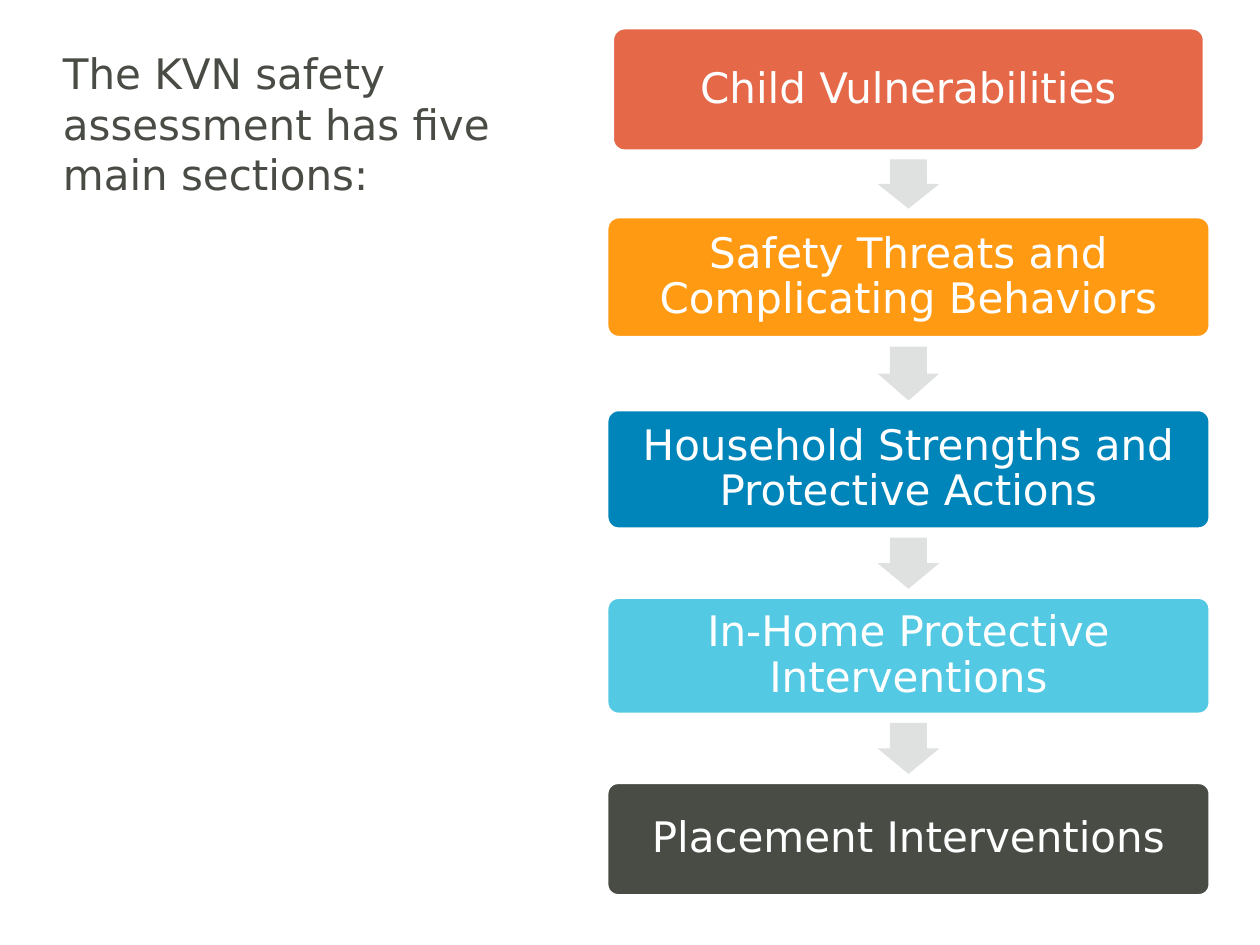
from pptx import Presentation
from pptx.dml.color import RGBColor
from pptx.enum import shapes, text
from pptx.util import Inches, Pt

FONT = "DejaVu Sans"
WHITE = RGBColor(0xFF, 0xFF, 0xFF)
CORAL = RGBColor(0xE5, 0x68, 0x49)
ORANGE = RGBColor(0xFF, 0x9A, 0x12)
BLUE = RGBColor(0x00, 0x85, 0xBA)
SKY = RGBColor(0x53, 0xC9, 0xE4)
CHARCOAL = RGBColor(0x48, 0x4C, 0x45)
GREY = RGBColor(0xDE, 0xE1, 0xDF)

CENTER = 7.21  # shared vertical axis of the flow
ARROW_WIDTH = 0.49
ARROW_SHARE = 0.75  # part of each gap that its arrow fills

# Section name, fill, top, width, height
SECTIONS = [
    ("Child Vulnerabilities", CORAL, 0.22, 4.7, 0.98),
    ("Safety Threats and Complicating Behaviors", ORANGE, 1.72, 4.79, 0.96),
    ("Household Strengths and Protective Actions", BLUE, 3.25, 4.79, 0.95),
    ("In-Home Protective Interventions", SKY, 4.74, 4.79, 0.93),
    ("Placement Interventions", CHARCOAL, 6.21, 4.79, 0.9),
]


def write_text(box, words, *, color, align, anchor, inset, spacing=1.0, size=24):
    frame = box.text_frame
    frame.word_wrap = True
    frame.vertical_anchor = anchor
    frame.margin_left = frame.margin_right = Inches(inset[0])
    frame.margin_top = frame.margin_bottom = Inches(inset[1])
    para = frame.paragraphs[0]
    para.alignment = align
    para.line_spacing = spacing
    span = para.add_run()
    span.text = words
    span.font.name = FONT
    span.font.size = Pt(size)
    span.font.color.rgb = color


def add_filled(page, kind, left, top, width, height, fill, adjustments):
    box = page.shapes.add_shape(
        kind, Inches(left), Inches(top), Inches(width), Inches(height))
    box.shadow.inherit = False
    for index, value in enumerate(adjustments):
        box.adjustments[index] = value
    box.fill.solid()
    box.fill.fore_color.rgb = fill
    box.line.fill.background()
    return box


def add_section(page, name, fill, top, width, height):
    box = add_filled(page, shapes.MSO_SHAPE.ROUNDED_RECTANGLE,
                     CENTER - width / 2, top, width, height, fill, [0.1])
    box.line.color.rgb = WHITE
    box.line.width = Pt(2)
    write_text(box, name, color=WHITE, align=text.PP_ALIGN.CENTER,
               anchor=text.MSO_ANCHOR.MIDDLE, inset=(0.13, 0.13), spacing=0.9)


def add_arrow(page, upper, lower):
    """Point down from one section to the next, centred in the gap."""
    length = (lower - upper) * ARROW_SHARE
    middle = (upper + lower) / 2
    arrow = add_filled(page, shapes.MSO_SHAPE.RIGHT_ARROW,
                       CENTER - length / 2, middle - ARROW_WIDTH / 2,
                       length, ARROW_WIDTH, GREY, [0.6, 0.5])
    arrow.rotation = 90


def add_intro(page):
    box = page.shapes.add_textbox(
        Inches(0.44), Inches(0.35), Inches(3.9), Inches(3.5))
    write_text(box, "The KVN safety assessment has five main sections:",
               color=CHARCOAL, align=text.PP_ALIGN.LEFT,
               anchor=text.MSO_ANCHOR.TOP, inset=(0.06, 0.03))


def main():
    deck = Presentation()
    deck.slide_width, deck.slide_height = Inches(10), Inches(7.5)
    page = deck.slides.add_slide(deck.slide_layouts[6])

    # Flow of sections, with an arrow in each gap
    previous_bottom = None
    for name, fill, top, width, height in SECTIONS:
        if previous_bottom is not None:
            add_arrow(page, previous_bottom, top)
        add_section(page, name, fill, top, width, height)
        previous_bottom = top + height

    # Introduction at the left
    add_intro(page)
    deck.save("out.pptx")


if __name__ == "__main__":
    main()
